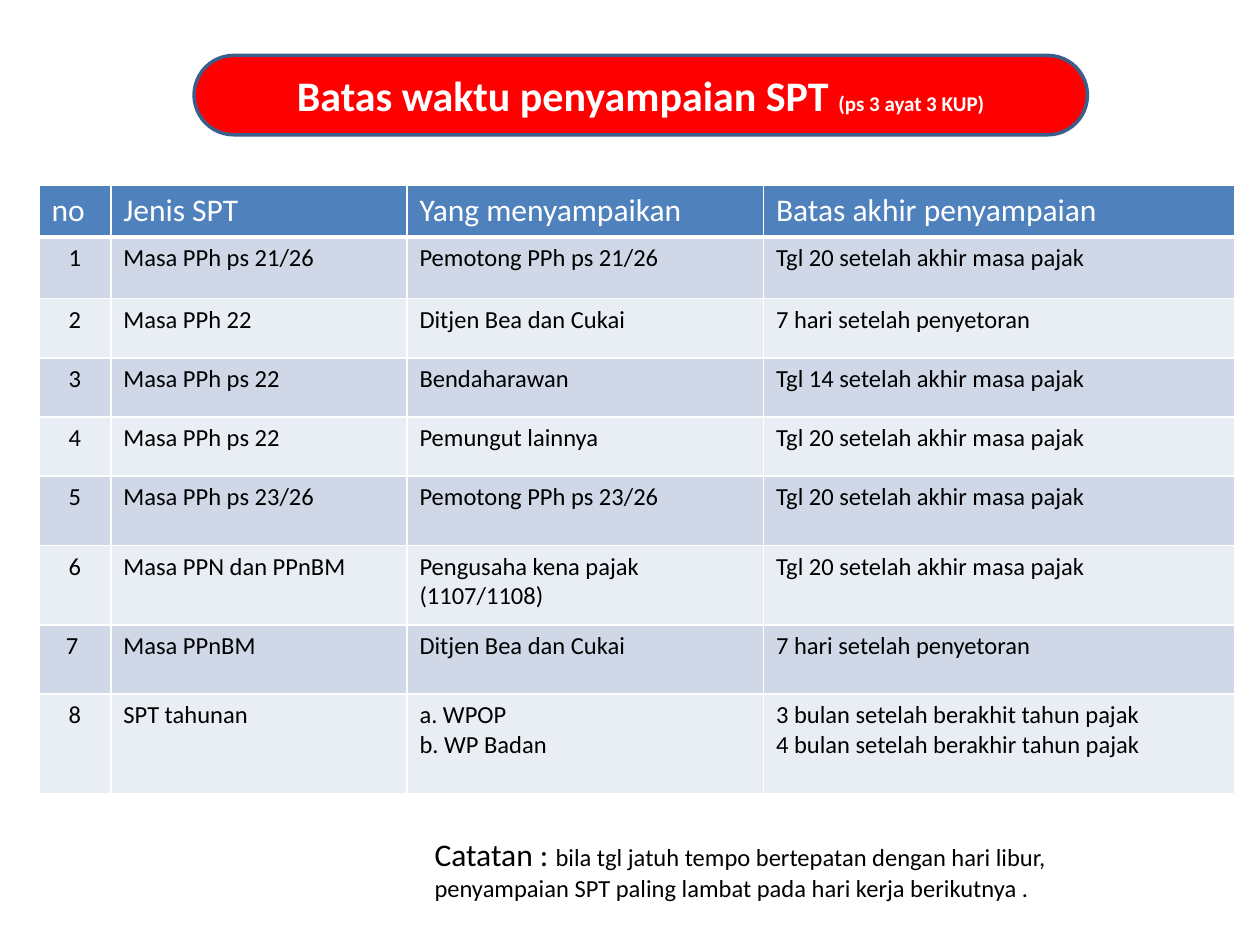
from lxml.etree import SubElement as Sub
from pptx import Presentation as Deck
from pptx.dml.color import RGBColor as RGB
from pptx.enum.shapes import MSO_SHAPE as SHAPE
from pptx.enum.text import MSO_ANCHOR as ANCHOR, PP_ALIGN as ALIGN
from pptx.oxml.ns import qn
from pptx.util import Inches, Pt

HUES = {
    "red": "FF0000", "edge": "3A5F8C", "head": "4F81BD",
    "odd": "D0D8E8", "even": "E9EDF4", "white": "FFFFFF", "black": "000000",
}
COLS = [0.57, 2.35, 2.83, 3.74]
HIGH = [0.41, 0.49, 0.47, 0.47, 0.47, 0.55, 0.63, 0.55, 0.79]
LATE = "Tgl 20 setelah akhir masa pajak"
WEEK = "7 hari setelah penyetoran"
PORT = "Ditjen Bea dan Cukai"
ROWS = [
    ["no", "Jenis SPT", "Yang menyampaikan", "Batas akhir penyampaian"],
    ["1", "Masa PPh ps 21/26", "Pemotong PPh ps 21/26", LATE],
    ["2", "Masa PPh 22", PORT, WEEK],
    ["3", "Masa PPh ps 22", "Bendaharawan", "Tgl 14 setelah akhir masa pajak"],
    ["4", "Masa PPh ps 22", "Pemungut lainnya", LATE],
    ["5", "Masa PPh ps 23/26", "Pemotong PPh ps 23/26", LATE],
    ["6", "Masa PPN dan PPnBM", "Pengusaha kena pajak (1107/1108)", LATE],
    ["7 ", "Masa PPnBM", PORT, WEEK],
    ["8", "SPT tahunan", "a. WPOP\nb. WP Badan",
     "3 bulan setelah berakhit tahun pajak\n4 bulan setelah berakhir tahun pajak"],
]


def hue(name):
    return RGB.from_string(HUES[name])


def write(par, text, size=14, color="black", bold=False, align=ALIGN.LEFT):
    par.alignment = align
    run = par.add_run()
    run.text = text
    font = run.font
    font.name, font.size, font.bold = "Calibri", Pt(size), bold
    font.color.rgb = hue(color)


def rule(cell, side, width):
    line = Sub(cell._tc.get_or_add_tcPr(), qn(f"a:ln{side}"), w=str(Pt(width)))
    fill = Sub(line, qn("a:solidFill"))
    Sub(fill, qn("a:srgbClr"), val=HUES["white"])


class Page:
    """Hold the style and the current slide."""

    def __init__(self, deck):
        self.slide = deck.slides.add_slide(deck.slide_layouts[5])
        self.shapes = self.slide.shapes

    def pill(self, *box):
        pill = self.shapes.add_shape(SHAPE.ROUNDED_RECTANGLE, *map(Inches, box))
        pill.adjustments[0] = 0.5
        pill.shadow.inherit = False
        pill.fill.solid()
        pill.fill.fore_color.rgb = hue("red")
        pill.line.color.rgb = hue("edge")
        pill.line.width = Pt(2)

    def title(self, parts, *box):
        title = self.shapes.title
        title.left, title.top, title.width, title.height = map(Inches, box)
        self.shapes._spTree.append(title._element)
        frame = title.text_frame
        frame.vertical_anchor = ANCHOR.MIDDLE
        for text, size in parts:
            write(frame.paragraphs[0], text, size=size, color="white",
                  bold=True, align=ALIGN.CENTER)

    def cell(self, cell, text, row, col):
        head = row == 0
        for side in "LRTB":
            rule(cell, side, 3 if head and side == "B" else 1)
        cell.fill.solid()
        cell.fill.fore_color.rgb = hue("head" if head else "odd" if row % 2 else "even")
        frame = cell.text_frame
        for i, part in enumerate(text.split("\n")):
            par = frame.add_paragraph() if i else frame.paragraphs[0]
            write(par, part, size=18 if head else 14,
                  color="white" if head else "black",
                  align=ALIGN.LEFT if head or col else ALIGN.CENTER)

    def table(self, rows, left, top):
        box = map(Inches, (left, top, sum(COLS), sum(HIGH)))
        grid = self.shapes.add_table(len(rows), len(COLS), *box).table
        for col, wide in zip(grid.columns, COLS):
            col.width = Inches(wide)
        for r, row in enumerate(rows):
            grid.rows[r].height = Inches(HIGH[r])
            for c, text in enumerate(row):
                self.cell(grid.cell(r, c), text, r, c)

    def note(self, lines, *box):
        frame = self.shapes.add_textbox(*map(Inches, box)).text_frame
        frame.word_wrap = True
        for i, line in enumerate(lines):
            par = frame.add_paragraph() if i else frame.paragraphs[0]
            for text, size in line:
                write(par, text, size=size)


def main():
    deck = Deck()
    deck.slide_width, deck.slide_height = Inches(10), Inches(7.5)
    page = Page(deck)
    banner = (1.54, 0.44, 7.09, 0.63)
    page.pill(*banner)
    page.title([("Batas waktu penyampaian SPT ", 24), ("(ps 3 ayat 3 KUP)", 12)], *banner)
    page.table(ROWS, 0.31, 1.47)
    page.note([
        [("Catatan : ", 18), ("bila tgl jatuh tempo bertepatan dengan hari libur,", 14)],
        [("penyampaian SPT paling lambat pada hari kerja berikutnya .", 14)],
    ], 3.35, 6.58, 6.18, 0.64)
    deck.save("out.pptx")


if __name__ == "__main__":
    main()
